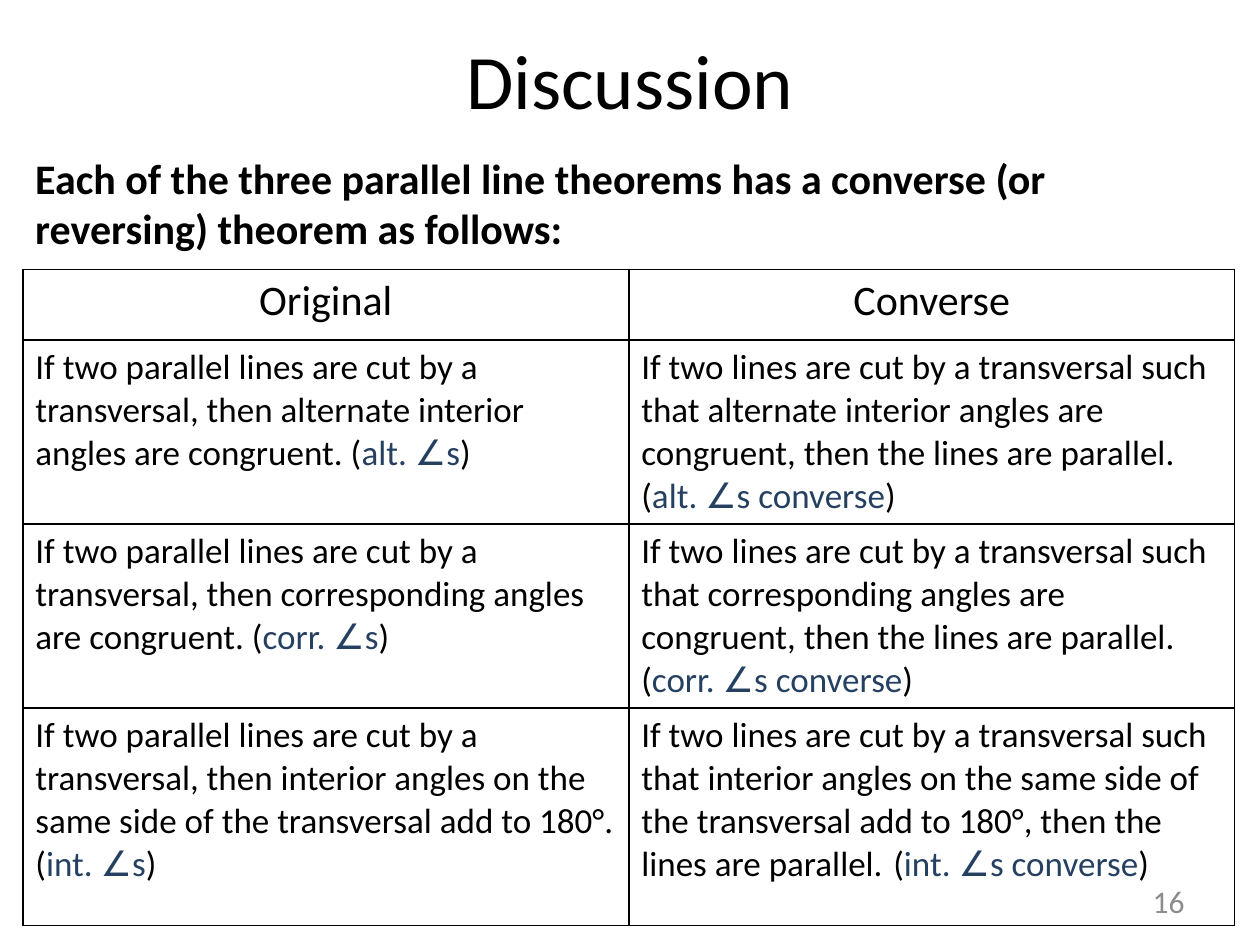
import pptx
import pptx.dml.color
import pptx.enum.text
import pptx.oxml.ns
import pptx.util
import lxml.etree

Cm = pptx.util.Cm
Pt = pptx.util.Pt
RGBColor = pptx.dml.color.RGBColor
ALIGN = pptx.enum.text.PP_ALIGN
ANCHOR = pptx.enum.text.MSO_ANCHOR
BLACK = RGBColor(0x00, 0x00, 0x00)
NAVY = RGBColor(0x25, 0x40, 0x61)
GRAY = RGBColor(0x8C, 0x8C, 0x8C)


def write(frame, *parts, size=20, color=BLACK, bold=False,
          align=ALIGN.LEFT, anchor=ANCHOR.TOP, before=0):
    """Write one paragraph; every second part is a navy term."""
    frame.word_wrap = True
    frame.vertical_anchor = anchor
    para = frame.paragraphs[0]
    para.alignment = align
    para.space_before = Pt(before)
    for i, part in enumerate(parts):
        run = para.add_run()
        run.text = part
        run.font.name = "Calibri"
        run.font.size = Pt(size)
        run.font.bold = bold
        run.font.color.rgb = NAVY if i % 2 else color


def border(cell):
    """Draw a thin black line on all four sides of a cell."""
    props = cell._tc.get_or_add_tcPr()
    qn = pptx.oxml.ns.qn
    for i, side in enumerate(("a:lnL", "a:lnR", "a:lnT", "a:lnB")):
        line = lxml.etree.Element(qn(side), w=str(Pt(1)))
        fill = lxml.etree.SubElement(line, qn("a:solidFill"))
        lxml.etree.SubElement(fill, qn("a:srgbClr"), val=str(BLACK))
        props.insert(i, line)


deck = pptx.Presentation()
deck.slide_width = Cm(25.4)
deck.slide_height = Cm(19.05)
slide = deck.slides.add_slide(deck.slide_layouts[6])
shapes = slide.shapes
left, width = Cm(0.46), Cm(24.43)

# Title and lead sentence
title = shapes.add_textbox(Cm(1.27), 0, Cm(22.86), Cm(3.18))
write(title.text_frame, "Discussion", size=44, align=ALIGN.CENTER,
      anchor=ANCHOR.MIDDLE)
lead = shapes.add_textbox(left, Cm(2.95), width, Cm(3.38))
write(lead.text_frame,
      "Each of the three parallel line theorems has a converse "
      "(or reversing) theorem as follows:", size=24, bold=True, before=2)

# Theorems: angles, claim, gap before the converse term, short term
rules = [
    ("alternate interior angles", "are congruent", " ", "alt. ∠s"),
    ("corresponding angles", "are congruent", " ", "corr. ∠s"),
    ("interior angles on the same side of the transversal", "add to 180°",
     " \t", "int. ∠s"),
]
heights = [1.42, 3.71, 3.71, 4.39]

# Table
table = shapes.add_table(4, 2, left, Cm(5.43), width, Cm(sum(heights))).table
table.first_row = table.horz_banding = False
for row, high in zip(table.rows, heights):
    row.height = Cm(high)
for cell in table.iter_cells():
    cell.fill.background()
    border(cell)
for col, head in enumerate(("Original", "Converse")):
    write(table.cell(0, col).text_frame, head, size=24, align=ALIGN.CENTER)
for row, (angles, claim, gap, term) in enumerate(rules, 1):
    write(table.cell(row, 0).text_frame,
          f"If two parallel lines are cut by a transversal, then {angles} "
          f"{claim}. (", term, ")")
    write(table.cell(row, 1).text_frame,
          f"If two lines are cut by a transversal such that {angles} "
          f"{claim}, then the lines are parallel.{gap}(",
          f"{term} converse", ")")

# Page number
page = shapes.add_textbox(Cm(18.21), Cm(17.65), Cm(5.92), Cm(1.02))
write(page.text_frame, "16", size=18, color=GRAY, align=ALIGN.RIGHT,
      anchor=ANCHOR.MIDDLE)

deck.save("out.pptx")
